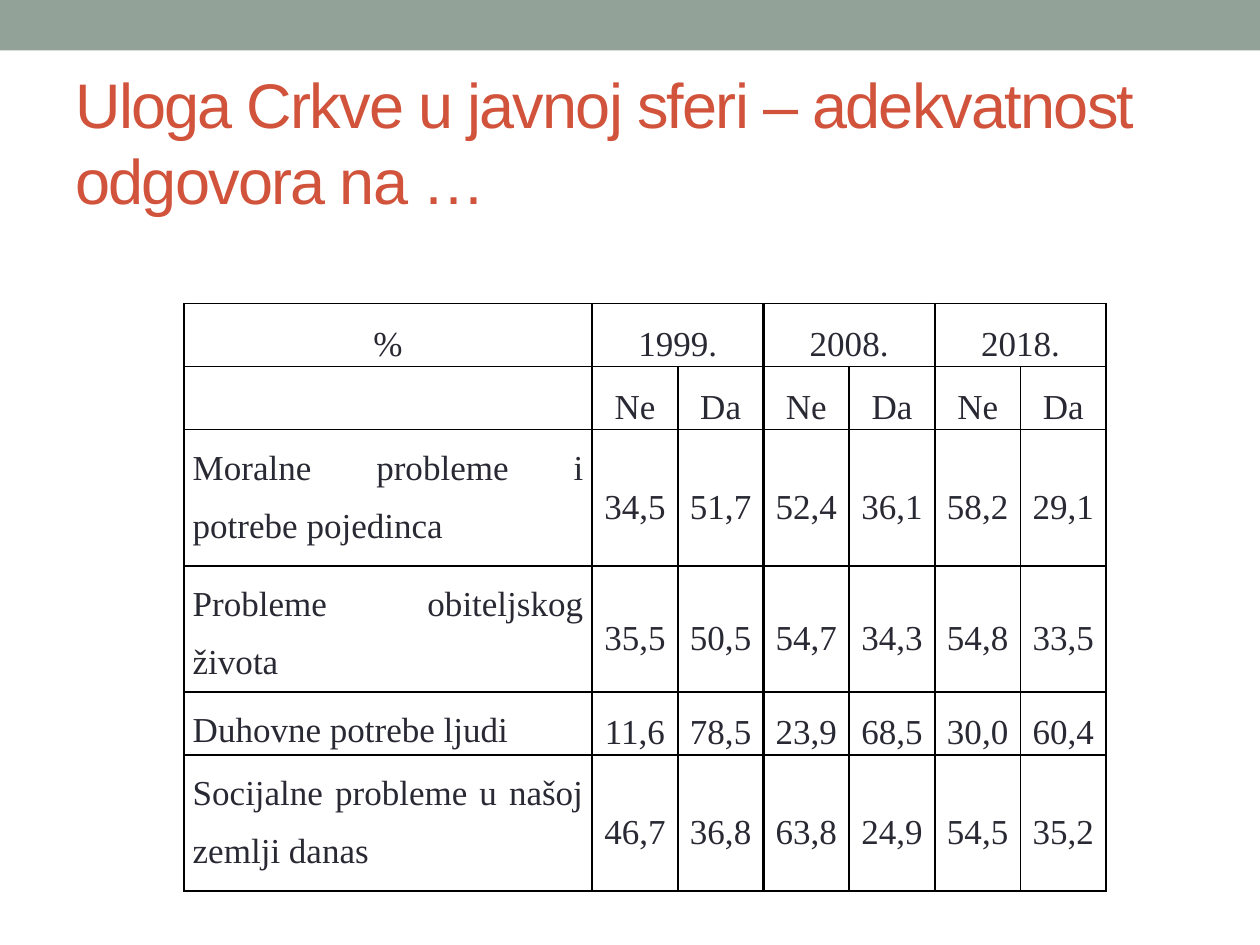
from typing import NamedTuple

from lxml.etree import SubElement
from pptx import Presentation
from pptx.dml.color import RGBColor
from pptx.enum.shapes import MSO_SHAPE as Shape
from pptx.enum.text import MSO_ANCHOR as Anchor, PP_ALIGN as Align
from pptx.oxml.ns import qn
from pptx.util import Inches, Pt

BAND = "93A299"
TITLE = "D2533C"
INK = "292934"
BORDER = "000000"
YEARS = ("1999.", "2008.", "2018.")
ANSWERS = ("Ne", "Da")
LABEL_WIDTH, VALUE_WIDTH = 3.24, 0.68
HEADER_HEIGHT = 0.5


class Issue(NamedTuple):
    label: str
    values: tuple[str, ...]
    height: float


ISSUES = (
    Issue("Moralne probleme i potrebe pojedinca",
          ("34,5", "51,7", "52,4", "36,1", "58,2", "29,1"), 1.08),
    Issue("Probleme obiteljskog života",
          ("35,5", "50,5", "54,7", "34,3", "54,8", "33,5"), 0.92),
    Issue("Duhovne potrebe ljudi",
          ("11,6", "78,5", "23,9", "68,5", "30,0", "60,4"), 0.5),
    Issue("Socijalne probleme u našoj zemlji danas",
          ("46,7", "36,8", "63,8", "24,9", "54,5", "35,2"), 1.08),
)


def color(value: str) -> RGBColor:
    return RGBColor.from_string(value)


def write(text_frame, text: str, *, size: float, font: str, ink: str,
          align=Align.LEFT, line_spacing: float = 1.0, before: float = 0,
          tracking: float = 0) -> None:
    paragraph = text_frame.paragraphs[0]
    paragraph.alignment = align
    paragraph.line_spacing = line_spacing
    paragraph.space_before = Pt(before)
    run = paragraph.add_run()
    run.text = text
    run.font.size = Pt(size)
    run.font.name = font
    run.font.color.rgb = color(ink)
    if tracking:
        run.font._element.set("spc", str(round(tracking * 100)))


def add_border(cell, side: str, width: float) -> None:
    properties = cell._tc.get_or_add_tcPr()
    line = SubElement(properties, qn(f"a:ln{side}"), w=str(Pt(width)))
    fill = SubElement(line, qn("a:solidFill"))
    SubElement(fill, qn("a:srgbClr"), val=BORDER)


def format_cell(cell, column: int) -> None:
    starts_year = column % 2 == 1
    last_column = column + cell.span_width - 1 if cell.is_merge_origin else column
    ends_group = last_column in (0, 2, 4)
    add_border(cell, "L", 1.5 if starts_year else 1)
    add_border(cell, "R", 1.5 if ends_group else 1)
    add_border(cell, "T", 1)
    add_border(cell, "B", 1)
    cell.fill.background()
    cell.margin_left = cell.margin_right = Inches(0.07)
    cell.margin_top = cell.margin_bottom = 0


def add_title(slide, text: str) -> None:
    shape = slide.shapes.add_textbox(Inches(0.5), Inches(0.58), Inches(9), Inches(1.08))
    shape.text_frame.word_wrap = True
    shape.text_frame.vertical_anchor = Anchor.MIDDLE
    write(shape.text_frame, text, size=36, font="Arial", ink=TITLE, tracking=-1)


def add_issue_table(slide) -> None:
    year_cells = [text for year in YEARS for text in (year, "")]
    rows = [["%", *year_cells], ["", *ANSWERS * len(YEARS)]]
    rows += [[issue.label, *issue.values] for issue in ISSUES]
    heights = [HEADER_HEIGHT] * 2 + [issue.height for issue in ISSUES]
    widths = [LABEL_WIDTH] + [VALUE_WIDTH] * len(year_cells)
    table = slide.shapes.add_table(
        len(rows), len(widths), Inches(1.46), Inches(2.41),
        Inches(sum(widths)), Inches(sum(heights))).table
    table.first_row = table.horz_banding = False
    for column, width in zip(table.columns, widths):
        column.width = Inches(width)
    for row, height in zip(table.rows, heights):
        row.height = Inches(height)
    for first in range(1, len(widths), 2):
        table.cell(0, first).merge(table.cell(0, first + 1))
    for row_index, texts in enumerate(rows):
        for column_index, text in enumerate(texts):
            cell = table.cell(row_index, column_index)
            format_cell(cell, column_index)
            is_label = row_index > 1 and column_index == 0
            cell.vertical_anchor = Anchor.TOP if is_label else Anchor.MIDDLE
            if text:
                write(cell.text_frame, text, size=20, font="Times New Roman", ink=INK,
                      align=Align.JUSTIFY if is_label else Align.CENTER,
                      line_spacing=1.5, before=6)


def main() -> None:
    presentation = Presentation()
    presentation.slide_width, presentation.slide_height = Inches(10), Inches(7.5)
    slide = presentation.slides.add_slide(presentation.slide_layouts[6])
    band = slide.shapes.add_shape(Shape.RECTANGLE, 0, 0, Inches(10), Inches(0.4))
    band.shadow.inherit = False
    band.fill.solid()
    band.fill.fore_color.rgb = color(BAND)
    band.line.fill.background()
    add_title(slide, "Uloga Crkve u javnoj sferi – adekvatnost odgovora na …")
    add_issue_table(slide)
    presentation.save("out.pptx")


if __name__ == "__main__":
    main()
